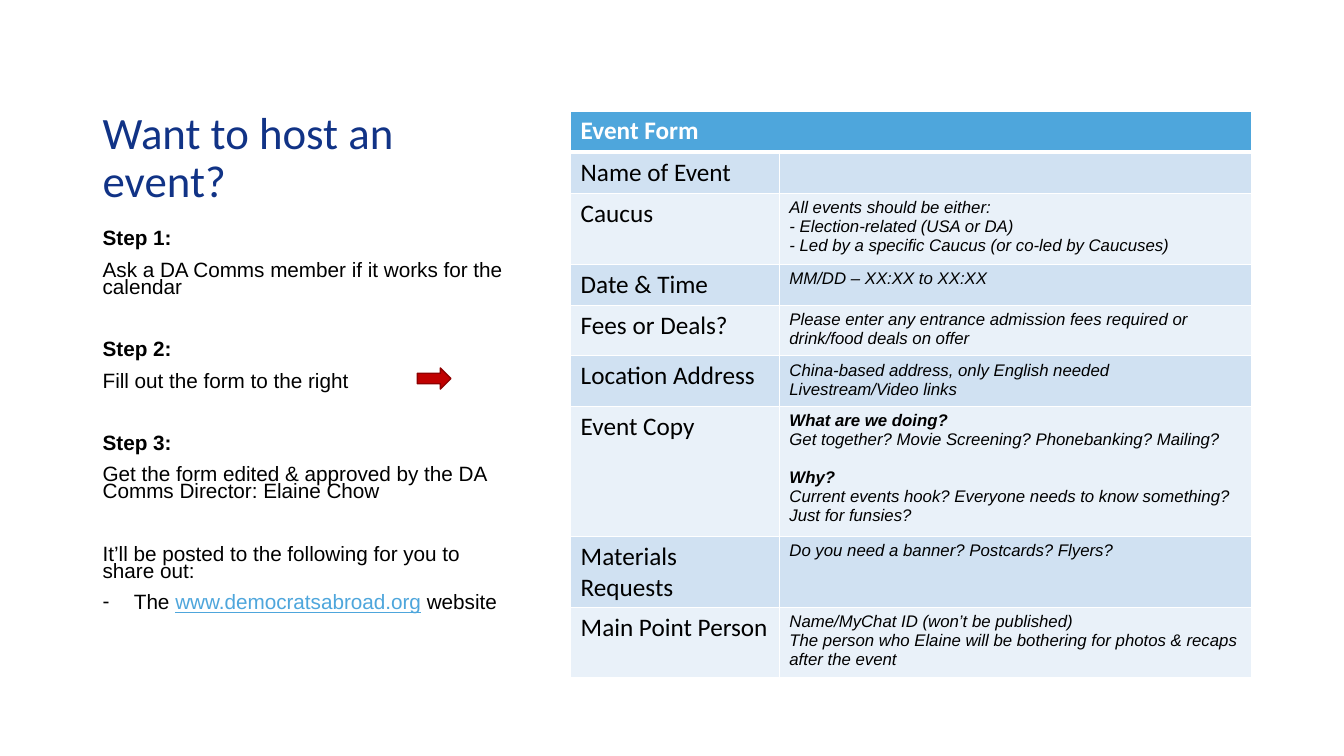
from collections import namedtuple

from lxml.etree import SubElement
from pptx import Presentation
from pptx.dml.color import RGBColor
from pptx.enum.shapes import MSO_SHAPE as Preset
from pptx.enum.text import MSO_ANCHOR as Anchor
from pptx.oxml.ns import qn
from pptx.util import Inches, Pt

COLORS = {
    "title": "113386", "text": "000000", "white": "FFFFFF", "accent": "4EA6DC",
    "band_dark": "D0E1F2", "band_light": "E9F1F9", "arrow": "C00000", "arrow_edge": "8E0000",
}
WIDTH, HEIGHT = Inches(13.33), Inches(7.5)
Box = namedtuple("Box", "left top width height")
Span = namedtuple("Span", "text bold color underline", defaults=(False, "text", False))
STEPS = [
    ("Step 1:", "Ask a DA Comms member if it works for the calendar"),
    ("Step 2:", "Fill out the form to the right"),
    ("Step 3:", "Get the form edited & approved by the DA Comms Director: Elaine Chow"),
]
POSTING = "It’ll be posted to the following for you to share out:"
WEBSITE = [Span("The "), Span("www.democratsabroad.org", False, "accent", True), Span(" website")]
QUESTIONS = ("What are we doing?", "Why?")
FORM = [
    ("Name of Event", []),
    ("Caucus", ["All events should be either:", "- Election-related (USA or DA)",
                "- Led by a specific Caucus (or co-led by Caucuses)"]),
    ("Date & Time", ["MM/DD – XX:XX to XX:XX"]),
    ("Fees or Deals?", ["Please enter any entrance admission fees required or drink/food deals on offer"]),
    ("Location Address", ["China-based address, only English needed", "Livestream/Video links"]),
    ("Event Copy", [QUESTIONS[0], "Get together? Movie Screening? Phonebanking? Mailing?", QUESTIONS[1],
                    "Current events hook? Everyone needs to know something? Just for funsies?"]),
    ("Materials Requests", ["Do you need a banner? Postcards? Flyers?"]),
    ("Main Point Person", ["Name/MyChat ID (won’t be published)",
                           "The person who Elaine will be bothering for photos & recaps after the event"]),
]


def rgb(name):
    """Return the named colour."""
    return RGBColor.from_string(COLORS[name])


def place(box):
    """Turn a box in percent of the slide into lengths."""
    return [round(share * side / 100) for share, side in zip(box, (WIDTH, HEIGHT) * 2)]


def add_span(para, span, font, size, italic=False):
    """Add one styled run to a paragraph."""
    run = para.add_run()
    run.text = span.text
    run.font.name, run.font.size = font, Pt(size)
    run.font.bold, run.font.italic, run.font.underline = span.bold, italic, span.underline
    run.font.color.rgb = rgb(span.color)


def next_para(frame):
    """Return the empty first paragraph or a new one."""
    first = frame.paragraphs[0]
    return frame.add_paragraph() if first.runs else first


def add_frame(page, box):
    """Add a wrapping text box and return its frame."""
    frame = page.shapes.add_textbox(*place(box)).text_frame
    frame.word_wrap = True
    return frame


def add_title(page, box):
    """Add the heading, resting on the bottom of its box."""
    frame = add_frame(page, box)
    frame.vertical_anchor = Anchor.BOTTOM
    para = frame.paragraphs[0]
    para.line_spacing = 0.9
    add_span(para, Span("Want to host an event?", color="title"), "Calibri", 32)


def add_step_para(frame, spans, gap=10):
    """Add a tightly spaced paragraph to the steps."""
    para = next_para(frame)
    para.line_spacing = 0.7
    para.space_before = Pt(gap)
    for span in spans:
        add_span(para, span, "Arial", 14.8)
    return para


def add_steps(page, box):
    """Add the three steps, the posting note and the arrow to the form."""
    frame = add_frame(page, box)
    for index, (heading, action) in enumerate(STEPS):
        add_step_para(frame, [Span(heading, True)], 32 if index else 0)
        add_step_para(frame, [Span(action)])
    add_step_para(frame, [Span(POSTING)], 32)
    properties = add_step_para(frame, WEBSITE)._p.get_or_add_pPr()
    properties.set("marL", str(Inches(0.31)))
    properties.set("indent", str(-Inches(0.31)))
    SubElement(properties, qn("a:buFont"), typeface="Arial")
    SubElement(properties, qn("a:buChar"), char="-")

    arrow_box = Box(box.left + 24.16, box.top + 18.67, 2.5, 2.8)
    arrow = page.shapes.add_shape(Preset.RIGHT_ARROW, *place(arrow_box))
    arrow.shadow.inherit = False
    arrow.fill.solid()
    arrow.fill.fore_color.rgb = rgb("arrow")
    arrow.line.color.rgb = rgb("arrow_edge")
    arrow.line.width = Pt(1)


def style_cell(cell, fill, bottom=1, top=1):
    """Give a cell white borders and a plain fill."""
    properties = cell._tc.get_or_add_tcPr()
    for side, points in (("L", 1), ("R", 1), ("T", top), ("B", bottom)):
        line = SubElement(properties, qn(f"a:ln{side}"), w=str(Pt(points)))
        SubElement(SubElement(line, qn("a:solidFill")), qn("a:srgbClr"), val=COLORS["white"])
    cell.fill.solid()
    cell.fill.fore_color.rgb = rgb(fill)


def add_form(page, box):
    """Add the event form with a merged header and banded rows."""
    left, top, width, height = place(box)
    table = page.shapes.add_table(len(FORM) + 1, 2, left, top, width, height).table
    table.columns[0].width = Inches(2.07)
    table.columns[1].width = width - Inches(2.07)
    table.cell(0, 0).merge(table.cell(0, 1))
    for column in range(2):
        style_cell(table.cell(0, column), "accent", bottom=3)
    add_span(table.cell(0, 0).text_frame.paragraphs[0], Span("Event Form", True, "white"), "Calibri", 18)

    for row, (label, hints) in enumerate(FORM, 1):
        for column in range(2):
            style_cell(table.cell(row, column), "band_dark" if row % 2 else "band_light",
                       top=3 if row == 1 else 1)
        add_span(table.cell(row, 0).text_frame.paragraphs[0], Span(label), "Calibri", 18)
        frame = table.cell(row, 1).text_frame
        for index, hint in enumerate(hints):
            para = next_para(frame)
            question = hint in QUESTIONS
            if question and index:
                para.space_before = Pt(13.8)
            add_span(para, Span(hint, question), "Arial", 12, italic=True)


def main():
    """Build and save the slide."""
    deck = Presentation()
    deck.slide_width, deck.slide_height = WIDTH, HEIGHT
    page = deck.slides.add_slide(deck.slide_layouts[6])
    add_title(page, Box(6.9, 14.4, 32.26, 13.73))
    add_form(page, Box(42.46, 14.67, 50.64, 49.2))
    add_steps(page, Box(6.9, 30, 32.26, 55.6))
    deck.save("out.pptx")


if __name__ == "__main__":
    main()
